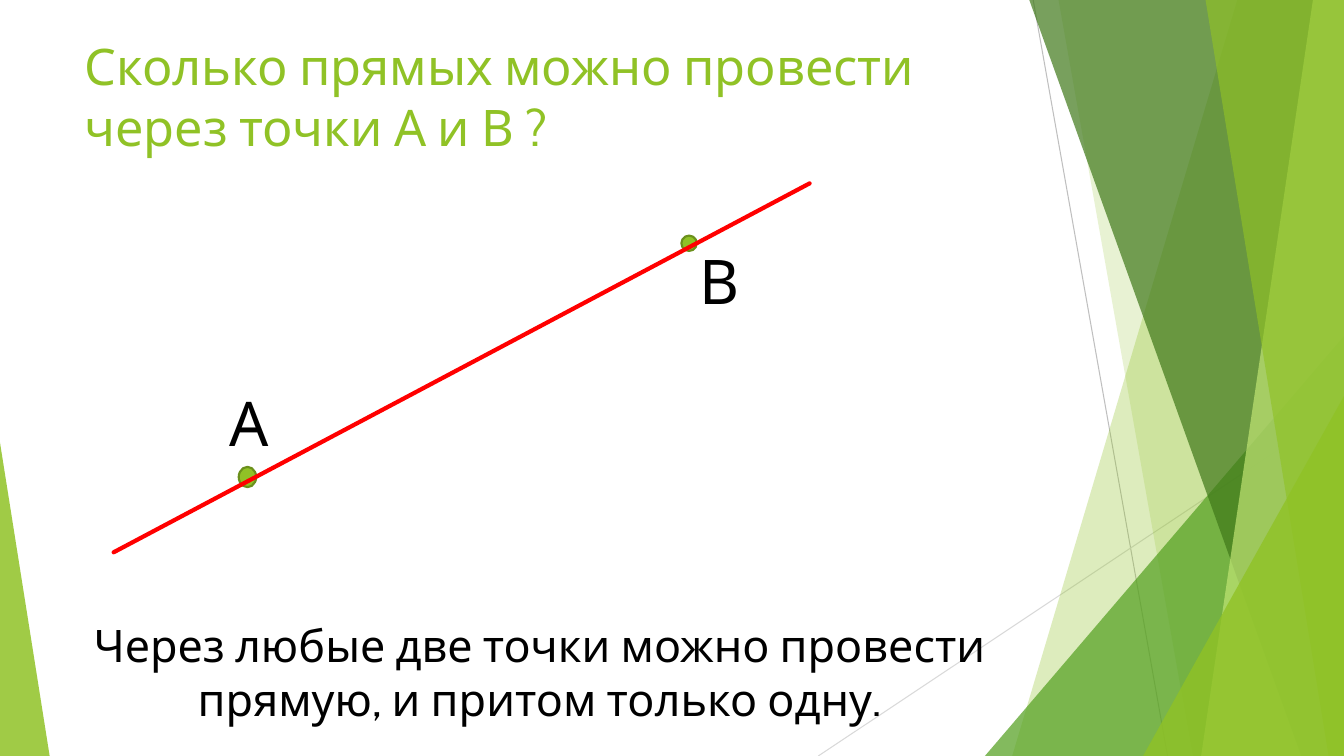
import pptx
import pptx.util
import pptx.dml.color
import pptx.enum.shapes
import pptx.enum.text
import pptx.oxml.ns
import lxml.etree

Pt = pptx.util.Pt
RGBColor = pptx.dml.color.RGBColor
MSO_SHAPE = pptx.enum.shapes.MSO_SHAPE
PP_ALIGN = pptx.enum.text.PP_ALIGN
qn = pptx.oxml.ns.qn

LIME = RGBColor(0x90, 0xC2, 0x26)
GREEN = RGBColor(0x54, 0xA0, 0x21)
DARK_GREEN = RGBColor(0x3F, 0x78, 0x19)
PALE_LIME = RGBColor(0xC0, 0xE4, 0x74)
POINT_OUTLINE = RGBColor(0x6B, 0x90, 0x1C)
GRAY = RGBColor(0xBF, 0xBF, 0xBF)
LIGHT_GRAY = RGBColor(0xD9, 0xD9, 0xD9)
RED = RGBColor(0xFF, 0x00, 0x00)
BLACK = RGBColor(0x00, 0x00, 0x00)
FONT = "Cabin"
WIDTH, HEIGHT = 960, 540

presentation = pptx.Presentation()
presentation.slide_width = Pt(WIDTH)
presentation.slide_height = Pt(HEIGHT)
slide = presentation.slides.add_slide(presentation.slide_layouts[6])


def add_line(start_x, start_y, end_x, end_y, color, weight):
    line = slide.shapes.add_connector(
        pptx.enum.shapes.MSO_CONNECTOR.STRAIGHT,
        Pt(start_x), Pt(start_y), Pt(end_x), Pt(end_y))
    line.line.color.rgb = color
    line.line.width = Pt(weight)
    lxml.etree.SubElement(line._element.spPr, qn("a:effectLst"))
    return line


def add_text(text, left, top, width, height, size, color, alignment):
    box = slide.shapes.add_textbox(Pt(left), Pt(top), Pt(width), Pt(height))
    box.text_frame.word_wrap = True
    box.text_frame.text = text
    paragraph = box.text_frame.paragraphs[0]
    paragraph.alignment = alignment
    font = paragraph.runs[0].font
    font.name = FONT
    font.size = Pt(size)
    font.color.rgb = color


add_line(738, 0, 834, HEIGHT, GRAY, 0.75)
add_line(WIDTH, 290, 584.5, HEIGHT, LIGHT_GRAY, 0.75)

facets = [
    ("band", 884, 723, LIME, 30),
    ("band", 756, 852, LIME, 20),
    ("triangle", 703.5, 256.5, 300, 1, GREEN, 72),
    ("band", 735, 929.5, DARK_GREEN, 70),
    ("band", 938, 858, PALE_LIME, 70),
    ("band", 861, 949, LIME, 65),
    ("triangle", 816.5, 143.5, 257, 1, LIME, 80),
    ("triangle", 0, 35.5, 224, 0, LIME, 85),
]
for kind, *geometry, color, opacity in facets:
    if kind == "band":
        top_x, bottom_x = geometry
        builder = slide.shapes.build_freeform(Pt(top_x), Pt(-0.7))
        builder.add_line_segments(
            [(Pt(WIDTH), Pt(-0.7)), (Pt(WIDTH), Pt(HEIGHT)), (Pt(bottom_x), Pt(HEIGHT))])
        facet = builder.convert_to_shape()
    else:
        left, width, height, apex = geometry
        facet = slide.shapes.add_shape(
            MSO_SHAPE.ISOSCELES_TRIANGLE,
            Pt(left), Pt(HEIGHT - height), Pt(width), Pt(height))
        facet.adjustments[0] = apex
    facet.shadow.inherit = False
    facet.line.fill.background()
    facet.fill.solid()
    facet.fill.fore_color.rgb = color
    color_element = facet._element.spPr.find(qn("a:solidFill")).find(qn("a:srgbClr"))
    lxml.etree.SubElement(color_element, qn("a:alpha")).set("val", str(opacity * 1000))

add_text("Сколько прямых можно провести через точки А и В ?",
         53.3, 21.6, 676.8, 131, 36, LIME, PP_ALIGN.LEFT)

for left, top, width, height in [(170.5, 333.5, 12.5, 14.5), (486.7, 168.3, 11, 11)]:
    point = slide.shapes.add_shape(
        MSO_SHAPE.OVAL, Pt(left), Pt(top), Pt(width), Pt(height))
    point.shadow.inherit = False
    point.fill.solid()
    point.fill.fore_color.rgb = LIME
    point.line.color.rgb = POINT_OUTLINE
    point.line.width = Pt(1.5)

red_line = add_line(578.3, 131, 81.2, 394.5, RED, 3)
red_line._element.spPr.find(qn("a:ln")).set("cap", "rnd")

add_text("А", 157, 271.5, 27.5, 60.5, 44, BLACK, PP_ALIGN.LEFT)
add_text("В", 492.5, 170, 36.7, 60.5, 44, BLACK, PP_ALIGN.LEFT)
add_text("Через любые две точки можно провести прямую, и притом только одну.",
         29.5, 438, 712, 85, 32, BLACK, PP_ALIGN.CENTER)

presentation.save("out.pptx")
